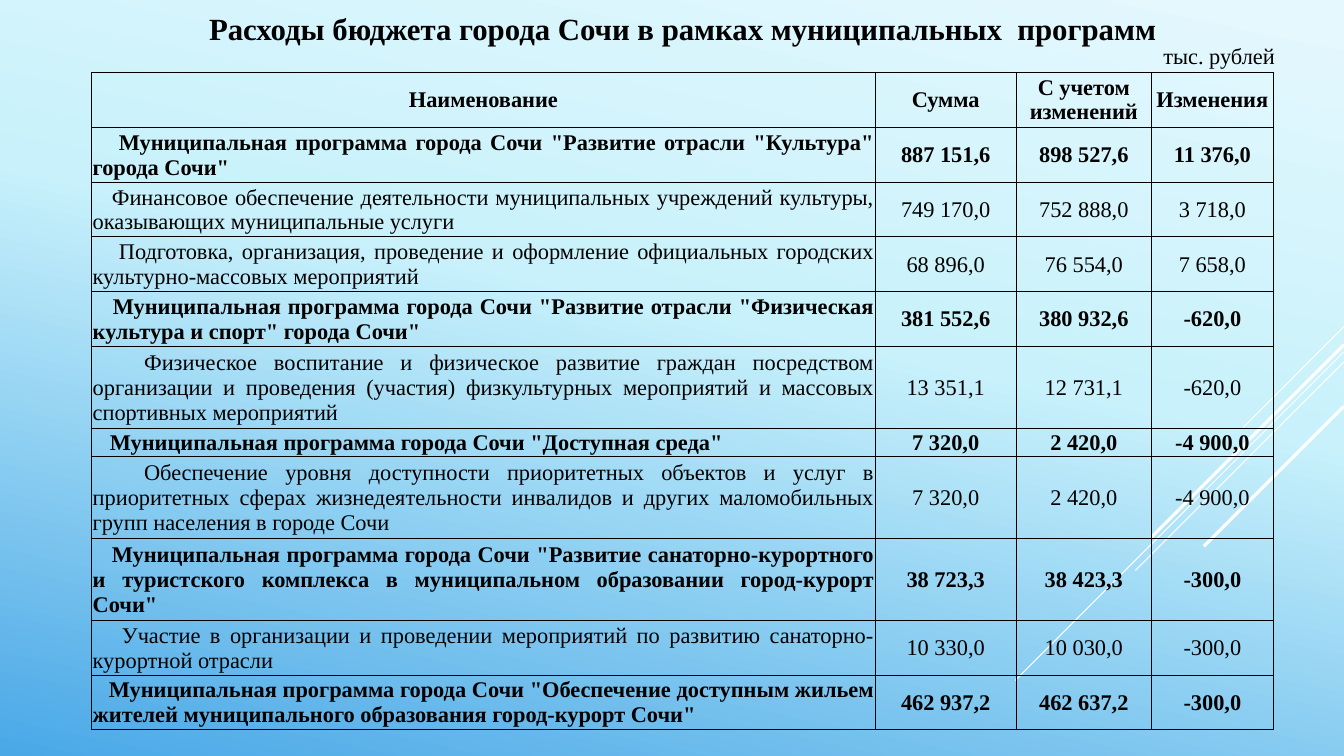
from copy import deepcopy
from dataclasses import dataclass

from lxml.etree import SubElement
from pptx import Presentation
from pptx.dml.color import RGBColor
from pptx.enum.shapes import MSO_CONNECTOR
from pptx.enum.text import MSO_ANCHOR, PP_ALIGN
from pptx.oxml.ns import qn
from pptx.slide import Slide
from pptx.table import _Cell
from pptx.text.text import TextFrame
from pptx.util import Inches, Pt

FONT = "Times New Roman"
COLORS = {
    "text": "000000",
    "border": "000000",
    "stripe": "FFFFFF",
    "sky_top": "E4F8FD",
    "sky_middle": "C8F1FB",
    "sky_bottom": "4AA8E7",
}
SLIDE_WIDTH = 13.33
TABLE_LEFT, TABLE_TOP, TABLE_HEIGHT = 0.91, 0.72, 6.51
COLUMN_WIDTHS = (7.77, 1.4, 1.34, 1.21)
HEADINGS = ("Наименование", "Сумма", "С учетом изменений", "Изменения")
HEADING_LINES = 2


@dataclass(frozen=True)
class Stripe:
    top: float
    reach: float
    weight: float


@dataclass(frozen=True)
class Expense:
    name: str
    amounts: tuple[str, str, str]
    lines: int
    indent: float
    bold: bool = False


STRIPES = (
    Stripe(3.24, 1.0, 0.75),
    Stripe(3.49, 3.26, 0.75),
    Stripe(3.59, 2.07, 0.75),
    Stripe(3.42, 1.91, 2.25),
    Stripe(4.03, 1.39, 2.25),
)

EXPENSES = (
    Expense('Муниципальная программа города Сочи "Развитие отрасли "Культура" города Сочи"',
            ("887 151,6", "898 527,6", "11 376,0"), 2, 0.26, True),
    Expense("Финансовое обеспечение деятельности муниципальных учреждений культуры, "
            "оказывающих муниципальные услуги",
            ("749 170,0", "752 888,0", "3 718,0"), 2, 0.19),
    Expense("Подготовка, организация, проведение и оформление официальных городских "
            "культурно-массовых мероприятий",
            ("68 896,0", "76 554,0", "7 658,0"), 2, 0.26),
    Expense('Муниципальная программа города Сочи "Развитие отрасли "Физическая '
            'культура и спорт" города Сочи"',
            ("381 552,6", "380 932,6", "-620,0"), 2, 0.2, True),
    Expense("Физическое воспитание и физическое развитие граждан посредством организации "
            "и проведения (участия) физкультурных мероприятий и массовых спортивных мероприятий",
            ("13 351,1", "12 731,1", "-620,0"), 3, 0.51),
    Expense('Муниципальная программа города Сочи "Доступная среда"',
            ("7 320,0", "2 420,0", "-4 900,0"), 1, 0.17, True),
    Expense("Обеспечение уровня доступности приоритетных объектов и услуг в приоритетных "
            "сферах жизнедеятельности инвалидов и других маломобильных групп населения в городе Сочи",
            ("7 320,0", "2 420,0", "-4 900,0"), 3, 0.51),
    Expense('Муниципальная программа города Сочи "Развитие санаторно-курортного и туристского '
            'комплекса в муниципальном образовании город-курорт Сочи"',
            ("38 723,3", "38 423,3", "-300,0"), 3, 0.19, True),
    Expense("Участие в организации и проведении мероприятий по развитию санаторно-курортной отрасли",
            ("10 330,0", "10 030,0", "-300,0"), 2, 0.29),
    Expense('Муниципальная программа города Сочи "Обеспечение доступным жильем жителей '
            'муниципального образования город-курорт Сочи"',
            ("462 937,2", "462 637,2", "-300,0"), 2, 0.16, True),
)


def color(name: str) -> RGBColor:
    return RGBColor.from_string(COLORS[name])


def write(frame: TextFrame, text: str, size: float, bold: bool = False,
          align: PP_ALIGN = PP_ALIGN.CENTER, indent: float = 0) -> None:
    para = frame.paragraphs[0]
    para.alignment = align
    if indent:
        para._p.get_or_add_pPr().set("indent", str(Inches(indent)))
    span = para.add_run()
    span.text = text
    span.font.name = FONT
    span.font.size = Pt(size)
    span.font.bold = bold
    span.font.color.rgb = color("text")


def paint_background(page: Slide) -> None:
    fill = page.background.fill
    fill.gradient()
    fill.gradient_angle = 360 - 102
    stop_list = page.element.find(".//" + qn("a:gsLst"))
    stop_list.append(deepcopy(stop_list[-1]))
    stops = ((0.02, "sky_top"), (0.43, "sky_middle"), (1.0, "sky_bottom"))
    for stop, (position, name) in zip(fill.gradient_stops, stops):
        stop.position = position
        stop.color.rgb = color(name)


def draw_stripe(page: Slide, stripe: Stripe) -> None:
    line = page.shapes.add_connector(
        MSO_CONNECTOR.STRAIGHT, Inches(SLIDE_WIDTH), Inches(stripe.top),
        Inches(SLIDE_WIDTH - stripe.reach), Inches(stripe.top + stripe.reach))
    line.line.color.rgb = color("stripe")
    line.line.width = Pt(stripe.weight)
    SubElement(line.element.spPr, qn("a:effectLst"))


def format_cell(cell: _Cell, margin: float) -> None:
    cell.vertical_anchor = MSO_ANCHOR.MIDDLE
    cell.margin_left = cell.margin_right = cell.margin_top = Inches(margin)
    cell.margin_bottom = 0
    properties = cell._tc.get_or_add_tcPr()
    for side in ("a:lnL", "a:lnR", "a:lnT", "a:lnB"):
        border = SubElement(properties, qn(side), w=str(Pt(0.5)))
        solid = SubElement(border, qn("a:solidFill"))
        SubElement(solid, qn("a:srgbClr"), val=COLORS["border"])
    cell.fill.background()


def draw_table(page: Slide) -> None:
    line_counts = [HEADING_LINES] + [expense.lines for expense in EXPENSES]
    table = page.shapes.add_table(
        len(line_counts), len(HEADINGS), Inches(TABLE_LEFT), Inches(TABLE_TOP),
        Inches(sum(COLUMN_WIDTHS)), Inches(TABLE_HEIGHT)).table
    table.first_row = table.horz_banding = False
    for column, width in zip(table.columns, COLUMN_WIDTHS):
        column.width = Inches(width)
    for row, lines in zip(table.rows, line_counts):
        row.height = Inches(TABLE_HEIGHT * lines / sum(line_counts))
    for index, heading in enumerate(HEADINGS):
        cell = table.cell(0, index)
        format_cell(cell, 0)
        write(cell.text_frame, heading, 16, True)
    for number, expense in enumerate(EXPENSES, start=1):
        name_cell = table.cell(number, 0)
        format_cell(name_cell, 0.01)
        write(name_cell.text_frame, expense.name, 16, expense.bold,
              PP_ALIGN.JUSTIFY, expense.indent)
        for index, amount in enumerate(expense.amounts, start=1):
            cell = table.cell(number, index)
            format_cell(cell, 0.01)
            write(cell.text_frame, amount, 16, expense.bold)


def main() -> None:
    deck = Presentation()
    deck.slide_width = Inches(SLIDE_WIDTH)
    deck.slide_height = Inches(7.5)
    page = deck.slides.add_slide(deck.slide_layouts[5])
    paint_background(page)
    for stripe in STRIPES:
        draw_stripe(page, stripe)

    title = page.shapes.title
    title.left, title.top = Inches(1.96), Inches(0.04)
    title.width, title.height = Inches(9.62), Inches(0.47)
    title.text_frame.vertical_anchor = MSO_ANCHOR.MIDDLE
    title.text_frame.word_wrap = True
    write(title.text_frame, "Расходы бюджета города Сочи в рамках муниципальных  программ", 22, True)

    unit_box = page.shapes.add_textbox(Inches(11.44), Inches(0.37), Inches(1.51), Inches(0.37))
    unit_box.text_frame.word_wrap = True
    write(unit_box.text_frame, "тыс. рублей", 16, align=PP_ALIGN.LEFT)

    draw_table(page)
    deck.save("out.pptx")


if __name__ == "__main__":
    main()
